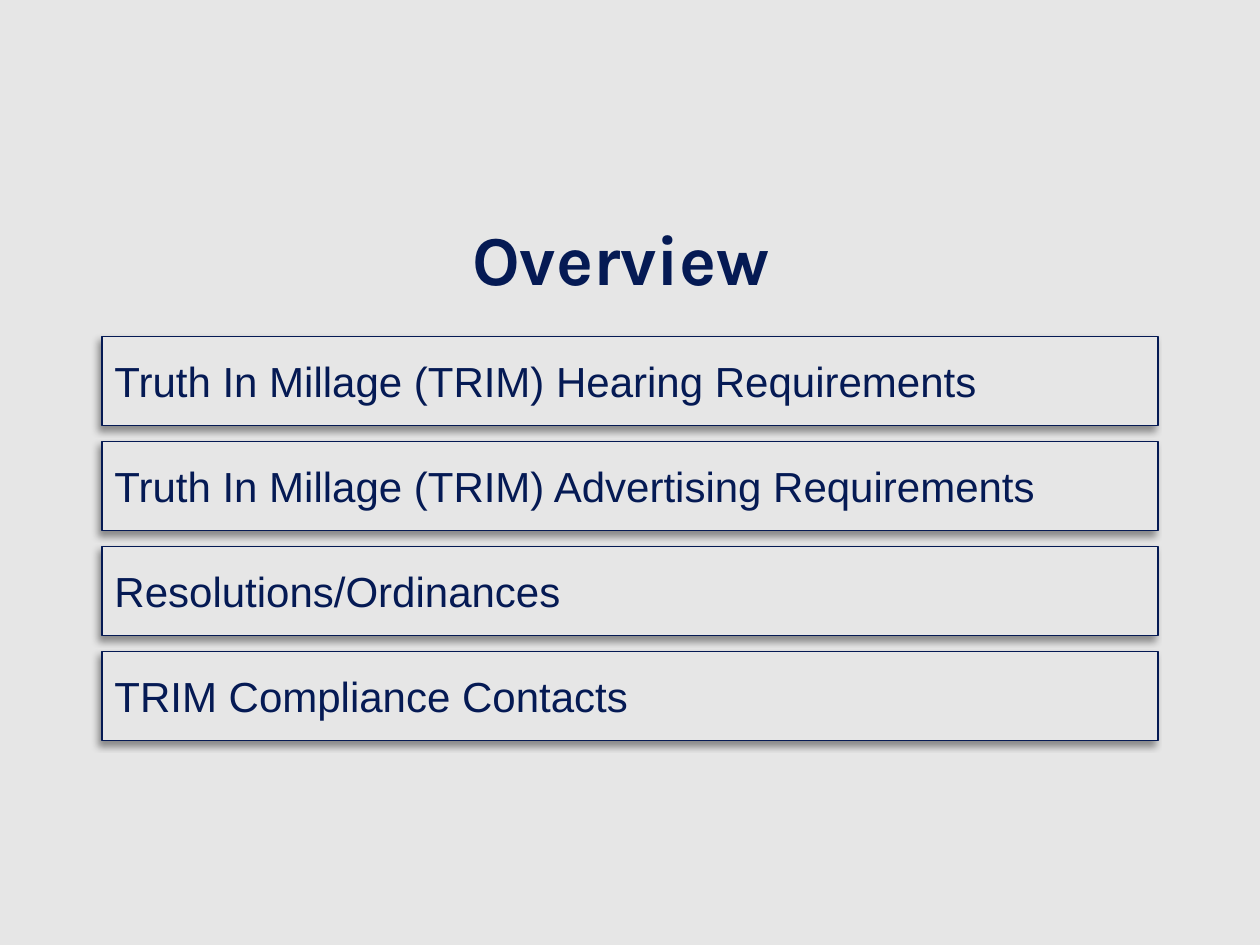
from dataclasses import dataclass

from lxml.etree import SubElement
from pptx import Presentation
from pptx.dml.color import RGBColor
from pptx.enum.shapes import MSO_SHAPE
from pptx.enum.text import MSO_ANCHOR, PP_ALIGN
from pptx.oxml.ns import qn
from pptx.util import Inches, Pt

HUES = {"back": "E6E6E6", "navy": "051A54", "shade": "000000"}


@dataclass
class Label:
    text: str
    font: str
    size: int
    bold: bool = False
    align: PP_ALIGN = PP_ALIGN.LEFT


def hue(name: str) -> RGBColor:
    return RGBColor.from_string(HUES[name])


def write(shape, label: Label) -> None:
    frame = shape.text_frame
    frame.word_wrap = True
    frame.vertical_anchor = MSO_ANCHOR.MIDDLE
    para = frame.paragraphs[0]
    para.alignment = label.align
    run = para.add_run()
    run.text = label.text
    font = run.font
    font.name = label.font
    font.size = Pt(label.size)
    font.bold = label.bold
    font.color.rgb = hue("navy")


def add_shade(shape) -> None:
    shape.shadow.inherit = False
    effects = shape.fill._xPr.find(qn("a:effectLst"))
    outer = SubElement(
        effects, qn("a:outerShdw"), blurRad=str(Pt(4)), dist=str(Pt(3)),
        dir=str(135 * 60000), algn="tr", rotWithShape="0",
    )
    color = SubElement(outer, qn("a:srgbClr"), val=HUES["shade"])
    SubElement(color, qn("a:alpha"), val="40000")


def add_bar(slide, top: float, label: Label) -> None:
    bar = slide.shapes.add_shape(
        MSO_SHAPE.RECTANGLE, Inches(0.81), Inches(top), Inches(8.38), Inches(0.71)
    )
    bar.fill.solid()
    bar.fill.fore_color.rgb = hue("back")
    bar.line.color.rgb = hue("navy")
    bar.line.width = Pt(0.75)
    add_shade(bar)
    write(bar, label)


def main() -> None:
    deck = Presentation()
    deck.slide_width = Inches(10)
    deck.slide_height = Inches(7.5)
    slide = deck.slides.add_slide(deck.slide_layouts[6])
    slide.background.fill.solid()
    slide.background.fill.fore_color.rgb = hue("back")

    title = slide.shapes.add_textbox(Inches(0.5), Inches(1.42), Inches(9), Inches(1.25))
    write(title, Label("Overview ", "Karla", 40, True, PP_ALIGN.CENTER))

    topics = [
        "Truth In Millage (TRIM) Hearing Requirements",
        "Truth In Millage (TRIM) Advertising Requirements",
        "Resolutions/Ordinances",
        "TRIM Compliance Contacts",
    ]
    step = 2.5 / 3
    for row, topic in enumerate(topics):
        add_bar(slide, 2.67 + row * step, Label(topic, "Arial", 24))

    deck.save("out.pptx")


if __name__ == "__main__":
    main()
